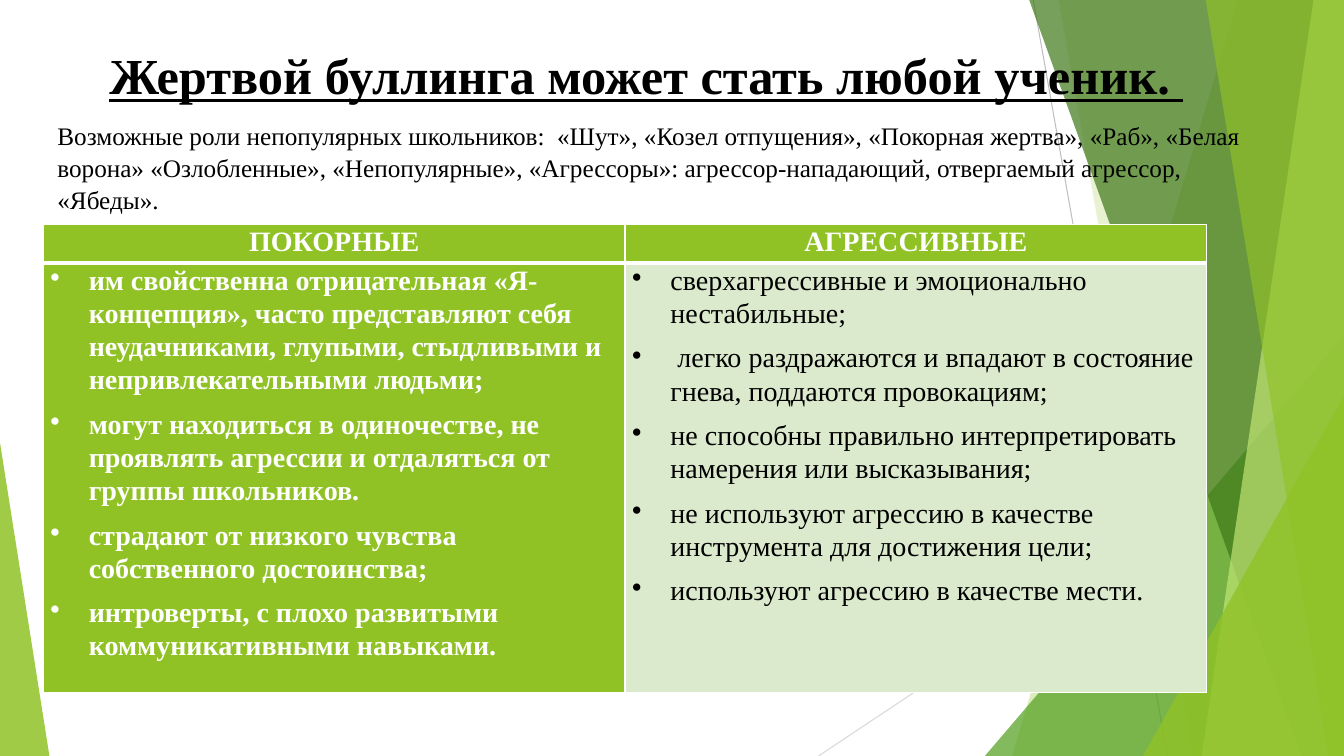
from dataclasses import dataclass

from lxml import etree
from pptx import Presentation
from pptx.dml.color import RGBColor
from pptx.enum.shapes import MSO_CONNECTOR, MSO_SHAPE
from pptx.enum.text import MSO_ANCHOR, PP_ALIGN
from pptx.oxml.ns import qn
from pptx.util import Emu, Inches, Pt

TRIANGLE = MSO_SHAPE.ISOSCELES_TRIANGLE
STRAIGHT = MSO_CONNECTOR.STRAIGHT
TOP = MSO_ANCHOR.TOP
CENTER, LEFT = PP_ALIGN.CENTER, PP_ALIGN.LEFT

FONT = "Times New Roman"
LINE_SPACING = 1.07
BULLET_INDENT = Inches(0.38)
COLORS = {
    "lime": "90C226", "green": "54A021", "forest": "3F7819", "pale": "C0E474",
    "mint": "DBE9CD", "white": "FFFFFF", "black": "000000",
    "gray": "BFBFBF", "silver": "D9D9D9",
}

prs = Presentation()
prs.slide_width, prs.slide_height = Inches(13.33), Inches(7.5)
slide = prs.slides.add_slide(prs.slide_layouts[6])


# Positions and sizes are percentages of the slide's width and height.
@dataclass
class Ray:
    start: tuple[float, float]
    end: tuple[float, float]
    color: str


@dataclass
class Shard:
    """A full-height band running to the right edge, with a slanted left side."""
    top_left: float
    bottom_left: float
    color: str
    opacity: int


@dataclass
class Corner:
    """A right triangle standing on the bottom edge; apex 0 is left, 1 is right."""
    left: float
    top: float
    width: float
    apex: int
    color: str
    opacity: int


@dataclass
class Column:
    heading: str
    traits: list[str]
    fill: str
    color: str
    bold: bool


RAYS = [
    Ray((76.88, 0), (86.86, 100), "gray"),
    Ray((100, 53.73), (60.9, 100), "silver"),
]
FACETS = [
    Shard(92.1, 75.3, "lime", 30),
    Shard(78.76, 88.73, "lime", 20),
    Corner(73.28, 44.4, 26.72, 1, "green", 72),
    Shard(76.58, 96.83, "forest", 70),
    Shard(97.73, 89.41, "pale", 70),
    Shard(89.71, 98.86, "lime", 65),
    Corner(85.05, 52.4, 14.95, 1, "lime", 80),
    Corner(0, 58.53, 3.68, 0, "lime", 85),
]
TITLE = "Жертвой буллинга может стать любой ученик. "
ROLES = (
    "Возможные роли непопулярных школьников:  «Шут», «Козел отпущения», "
    "«Покорная жертва», «Раб», «Белая ворона» «Озлобленные», «Непопулярные», "
    "«Агрессоры»: агрессор-нападающий, отвергаемый агрессор, «Ябеды»."
)
COLUMNS = [
    Column("ПОКОРНЫЕ", [
        "им свойственна отрицательная «Я-концепция», часто представляют себя "
        "неудачниками, глупыми, стыдливыми и непривлекательными людьми;",
        "могут находиться в одиночестве, не проявлять агрессии и отдаляться "
        "от группы школьников.",
        "страдают от низкого чувства собственного достоинства;",
        "интроверты, с плохо развитыми коммуникативными навыками.",
    ], "lime", "white", True),
    Column("АГРЕССИВНЫЕ", [
        "сверхагрессивные и эмоционально нестабильные;",
        " легко раздражаются и впадают в состояние гнева, поддаются провокациям;",
        "не способны правильно интерпретировать намерения или высказывания;",
        "не используют агрессию в качестве инструмента для достижения цели;",
        "используют агрессию в качестве мести.",
    ], "mint", "black", False),
]


def across(percent: float) -> Emu:
    return Emu(round(prs.slide_width * percent / 100))


def down(percent: float) -> Emu:
    return Emu(round(prs.slide_height * percent / 100))


def rgb(color: str) -> RGBColor:
    return RGBColor.from_string(COLORS[color])


def draw_ray(ray: Ray) -> None:
    (x1, y1), (x2, y2) = ray.start, ray.end
    line = slide.shapes.add_connector(STRAIGHT, across(x1), down(y1), across(x2), down(y2))
    line.line.color.rgb = rgb(ray.color)
    line.line.width = Pt(0.75)
    etree.SubElement(line._element.spPr, qn("a:effectLst"))


def draw_facet(facet: Shard | Corner) -> None:
    if isinstance(facet, Shard):
        outline = slide.shapes.build_freeform(across(facet.top_left), 0)
        outline.add_line_segments([
            (across(100), 0), (across(100), down(100)), (across(facet.bottom_left), down(100)),
        ])
        shape = outline.convert_to_shape()
    else:
        shape = slide.shapes.add_shape(
            TRIANGLE, across(facet.left), down(facet.top),
            across(facet.width), down(100 - facet.top))
        shape.adjustments[0] = facet.apex
    shape.shadow.inherit = False
    shape.line.fill.background()
    shape.fill.solid()
    shape.fill.fore_color.rgb = rgb(facet.color)
    tint = shape._element.spPr.find(f"{qn('a:solidFill')}/{qn('a:srgbClr')}")
    etree.SubElement(tint, qn("a:alpha"), val=str(facet.opacity * 1000))


def write(frame, lines: list[str], size: int, color: str, bold: bool = False,
          align=LEFT, underline: bool = False, bulleted: bool = False) -> None:
    frame.word_wrap = True
    for index, text in enumerate(lines):
        paragraph = frame.paragraphs[0] if index == 0 else frame.add_paragraph()
        paragraph.text = text
        paragraph.alignment = align
        paragraph.line_spacing = LINE_SPACING
        font = paragraph.font
        font.name, font.size, font.bold, font.underline = FONT, Pt(size), bold, underline
        font.color.rgb = rgb(color)
        if bulleted:
            paragraph.space_after = Pt(8)
            props = paragraph._p.get_or_add_pPr()
            props.set("marL", str(BULLET_INDENT))
            props.set("indent", str(-BULLET_INDENT))
            bullet = etree.Element(qn("a:buChar"), char="•")
            props.find(qn("a:defRPr")).addprevious(bullet)


def style_cell(cell, fill: str, bottom_border: float) -> None:
    cell.margin_left = cell.margin_right = Inches(0.07)
    cell.margin_top = cell.margin_bottom = 0
    cell.vertical_anchor = TOP
    props = cell._tc.get_or_add_tcPr()
    for side, width in zip("LRTB", (1, 1, 1, bottom_border)):
        border = etree.SubElement(props, qn(f"a:ln{side}"), w=str(Pt(width)))
        solid = etree.SubElement(border, qn("a:solidFill"))
        etree.SubElement(solid, qn("a:srgbClr"), val=COLORS["white"])
    cell.fill.solid()
    cell.fill.fore_color.rgb = rgb(fill)


def add_text(left: float, top: float, height: float):
    box = slide.shapes.add_textbox(across(left), down(top), across(90.9), down(height))
    return box.text_frame


def draw_table() -> None:
    row_heights = (5.07, 56.67)
    table = slide.shapes.add_table(
        2, len(COLUMNS), across(3.23), down(29.73),
        across(86.56), down(sum(row_heights))).table
    for row, height in zip(table.rows, row_heights):
        row.height = down(height)
    for index, column in enumerate(COLUMNS):
        heading, traits = table.cell(0, index), table.cell(1, index)
        style_cell(heading, "lime", 3)
        write(heading.text_frame, [column.heading], 20, "white", bold=True, align=CENTER)
        style_cell(traits, column.fill, 1)
        write(traits.text_frame, column.traits, 20, column.color, column.bold, bulleted=True)


def main() -> None:
    for ray in RAYS:
        draw_ray(ray)
    for facet in FACETS:
        draw_facet(facet)
    write(add_text(2.63, 4.67, 19.33), [TITLE], 36, "black", bold=True,
          align=CENTER, underline=True)
    draw_table()
    write(add_text(3.53, 14.93, 14.27), [ROLES], 18, "black")
    prs.save("out.pptx")


if __name__ == "__main__":
    main()
